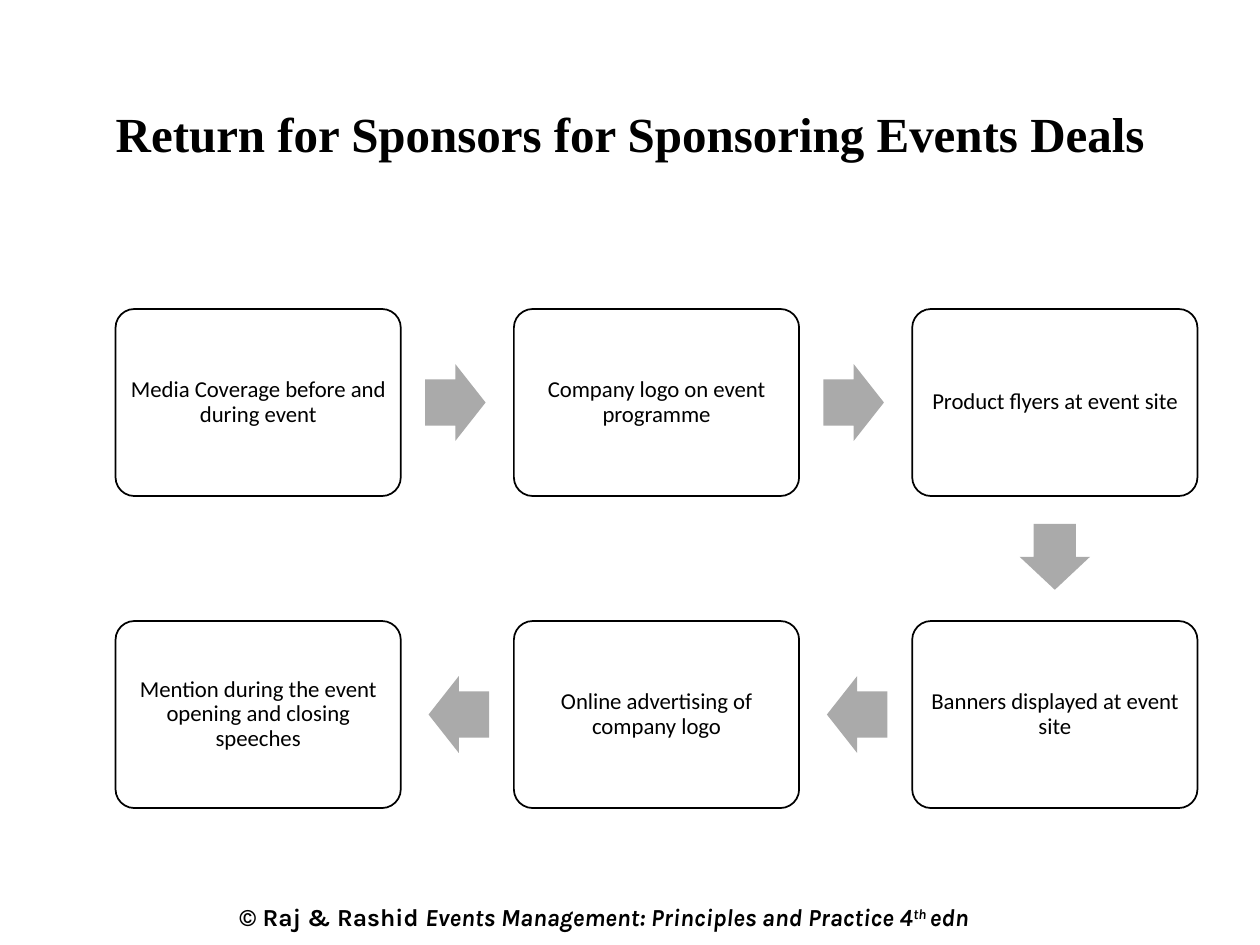
from dataclasses import dataclass

from pptx import Presentation
from pptx.dml.color import RGBColor
from pptx.enum.shapes import MSO_SHAPE as Shape
from pptx.enum.text import MSO_ANCHOR as Anchor, MSO_AUTO_SIZE as AutoSize, PP_ALIGN as Align
from pptx.util import Cm, Pt

BLACK = RGBColor(0x00, 0x00, 0x00)
WHITE = RGBColor(0xFF, 0xFF, 0xFF)
GREY = RGBColor(0xAA, 0xAA, 0xAA)

BOX_W, BOX_H = 5.75, 3.77
LEFT, TOP = 2.33, 6.23
COL_PITCH, ROW_PITCH = 8.03, 6.29
ARROW_W, ARROW_H = 1.22, 1.55
DOWN_W, DOWN_H = 1.42, 1.33


@dataclass
class Step:
    text: str
    col: int
    row: int

    @property
    def x(self) -> float:
        return LEFT + self.col * COL_PITCH

    @property
    def y(self) -> float:
        return TOP + self.row * ROW_PITCH


@dataclass
class FooterRun:
    text: str
    italic: bool = True
    superscript: bool = False


STEPS = [
    Step("Media Coverage before and during event", 0, 0),
    Step("Company logo on event programme", 1, 0),
    Step("Product flyers at event site", 2, 0),
    Step("Banners displayed at event site", 2, 1),
    Step("Online advertising of company logo", 1, 1),
    Step("Mention during the event opening and closing speeches", 0, 1),
]

FOOTER = [
    FooterRun("© Raj & Rashid ", italic=False),
    FooterRun("Events Management: Principles and Practice 4"),
    FooterRun("th ", superscript=True),
    FooterRun("edn"),
]


def add_run(p, text: str, font: str, size: float, bold: bool = False):
    r = p.add_run()
    r.text = text
    r.font.name = font
    r.font.size = Pt(size)
    r.font.bold = bold
    r.font.color.rgb = BLACK
    return r


def add_title(s, text: str) -> None:
    title = s.shapes.title
    title.left, title.top, title.width, title.height = Cm(1.27), Cm(1.85), Cm(22.86), Cm(2.67)
    tf = title.text_frame
    tf.auto_size = AutoSize.NONE
    tf.vertical_anchor = Anchor.TOP
    tf.margin_top = Cm(0.24)
    p = tf.paragraphs[0]
    p.alignment = Align.CENTER
    add_run(p, text, "Times New Roman", 28, bold=True)


def add_footer(s, runs: list[FooterRun]) -> None:
    tf = s.shapes.add_textbox(Cm(4.57), Cm(18.06), Cm(17.7), Cm(0.86)).text_frame
    tf.word_wrap = True
    p = tf.paragraphs[0]
    for run in runs:
        r = add_run(p, run.text, "Karla", 14, bold=True)
        r.font.italic = run.italic
        if run.superscript:
            r._r.get_or_add_rPr().set("baseline", "30000")


def add_box(s, step: Step) -> None:
    sp = s.shapes.add_shape(Shape.ROUNDED_RECTANGLE, Cm(step.x), Cm(step.y), Cm(BOX_W), Cm(BOX_H))
    sp.adjustments[0] = 0.1
    sp.shadow.inherit = False
    sp.fill.solid()
    sp.fill.fore_color.rgb = WHITE
    sp.line.color.rgb = BLACK
    sp.line.width = Pt(1)
    tf = sp.text_frame
    tf.word_wrap = True
    tf.vertical_anchor = Anchor.MIDDLE
    tf.margin_left = tf.margin_right = tf.margin_top = tf.margin_bottom = Cm(0.2)
    p = tf.paragraphs[0]
    p.alignment = Align.CENTER
    p.line_spacing = 0.9
    p.space_after = Pt(5)
    add_run(p, step.text, "Calibri", 13)


def add_arrow(s, start: Step, end: Step) -> None:
    w, h = ARROW_W, ARROW_H
    y = start.y + (BOX_H - h) / 2
    if end.row > start.row:
        kind, w, h = Shape.DOWN_ARROW, DOWN_W, DOWN_H
        x, y = start.x + (BOX_W - w) / 2, start.y + BOX_H + 0.56
    elif end.col > start.col:
        kind, x = Shape.RIGHT_ARROW, start.x + BOX_W + 0.49
    else:
        kind, x = Shape.LEFT_ARROW, end.x + BOX_W + 0.56
    sp = s.shapes.add_shape(kind, Cm(x), Cm(y), Cm(w), Cm(h))
    sp.adjustments[0] = 0.6
    sp.adjustments[1] = 0.5
    sp.shadow.inherit = False
    sp.fill.solid()
    sp.fill.fore_color.rgb = GREY
    sp.line.fill.background()


def main() -> None:
    prs = Presentation()
    prs.slide_width, prs.slide_height = Cm(25.4), Cm(19.05)
    s = prs.slides.add_slide(prs.slide_layouts[5])
    add_title(s, "Return for Sponsors for Sponsoring Events Deals")
    for step in STEPS:
        add_box(s, step)
    for start, end in zip(STEPS, STEPS[1:]):
        add_arrow(s, start, end)
    add_footer(s, FOOTER)
    prs.save("out.pptx")


if __name__ == "__main__":
    main()
